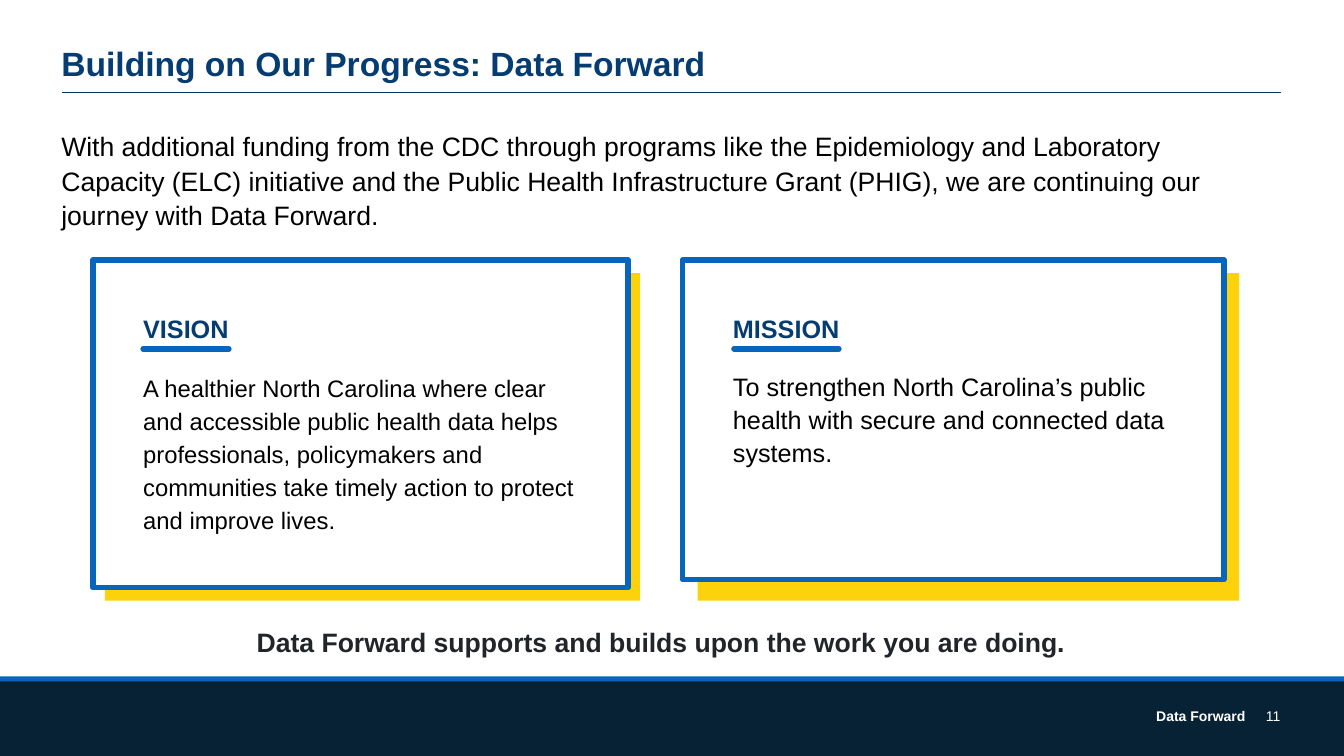
from dataclasses import dataclass

from lxml.etree import SubElement
from pptx import Presentation
from pptx.dml.color import RGBColor
from pptx.enum.shapes import MSO_CONNECTOR, MSO_SHAPE
from pptx.enum.text import MSO_ANCHOR, PP_ALIGN
from pptx.oxml.ns import qn
from pptx.util import Emu, Pt

SCALE = 9144  # EMU in one px, 100 px to the inch


@dataclass(frozen=True)
class Theme:
    font: str = "Arial"
    navy: str = "053C71"
    rule: str = "003764"
    blue: str = "0765BD"
    gold: str = "FCD20D"
    dark: str = "072235"
    white: str = "FFFFFF"
    black: str = "000000"
    ink: str = "212529"
    title: int = 24
    lead: int = 19
    head: int = 18
    small: int = 10
    edge: int = 4


THEME = Theme()


def px(num):
    return Emu(num * SCALE)


def rgb(code):
    return RGBColor.from_string(code)


def write(frame, text, first=True, size=THEME.lead, color=THEME.black,
          bold=False, align=PP_ALIGN.LEFT, lead=None, after=0):
    """Write one paragraph, the frame's first one or a new last one."""
    para = frame.paragraphs[0] if first else frame.add_paragraph()
    para.alignment = align
    para.line_spacing = lead
    para.space_after = Pt(after)
    run = para.add_run()
    run.text = text
    font = run.font
    font.name, font.size, font.bold = THEME.font, Pt(size), bold
    font.color.rgb = rgb(color)


def inset(frame, side, top):
    frame.margin_left = frame.margin_right = px(side)
    frame.margin_top = frame.margin_bottom = px(top)


def label(slide, box, text, side=10, top=5, anchor=MSO_ANCHOR.TOP, **style):
    frame = slide.shapes.add_textbox(*map(px, box)).text_frame
    frame.word_wrap = True
    frame.vertical_anchor = anchor
    inset(frame, side, top)
    write(frame, text, **style)


def block(slide, box, fill, edge=None):
    shape = slide.shapes.add_shape(MSO_SHAPE.RECTANGLE, *map(px, box))
    shape.shadow.inherit = False
    shape.fill.solid()
    shape.fill.fore_color.rgb = rgb(fill)
    if edge:
        shape.line.color.rgb = rgb(edge)
        shape.line.width = Pt(THEME.edge)
    else:
        shape.line.fill.background()
    return shape


def rule(slide, left, right, top, color, width, cap="flat"):
    line = slide.shapes.add_connector(
        MSO_CONNECTOR.STRAIGHT, px(left), px(top), px(right), px(top))
    line.line.color.rgb = rgb(color)
    line.line.width = Pt(width)
    props = line.element.spPr
    props.get_or_add_ln().set("cap", cap)
    SubElement(props, qn("a:effectLst"))


def card(slide, box, head, body, size, line):
    frame = block(slide, box, THEME.white, THEME.blue).text_frame
    frame.word_wrap = True
    frame.vertical_anchor = MSO_ANCHOR.TOP
    inset(frame, 50, 50)
    gaps = {"lead": Pt(23.6), "after": 18}
    write(frame, head, size=THEME.head, color=THEME.navy, bold=True, **gaps)
    write(frame, body, first=False, size=size, **gaps)
    rule(slide, *line, 346, THEME.blue, THEME.edge, cap="rnd")


def footer(slide):
    block(slide, (0, 671, 1333, 79), THEME.blue)
    block(slide, (0, 676, 1333, 74), THEME.dark)
    style = {"size": THEME.small, "color": THEME.white,
             "align": PP_ALIGN.RIGHT}
    label(slide, (1120, 690, 150, 40), "11", side=0, top=0,
          anchor=MSO_ANCHOR.MIDDLE, **style)
    label(slide, (925, 697, 320, 27), "Data Forward", bold=True, **style)


def main():
    deck = Presentation()
    deck.slide_width, deck.slide_height = px(1333), px(750)
    slide = deck.slides.add_slide(deck.slide_layouts[6])

    footer(slide)
    rule(slide, 62, 1271, 92, THEME.rule, 1)
    label(slide, (51, 42, 1242, 80), "Building on Our Progress: Data Forward",
          size=THEME.title, color=THEME.navy, bold=True, lead=0.9)
    gaps = {"lead": Pt(24.8), "after": 18}
    label(slide, (51, 121, 1171, 113),
          "With additional funding from the CDC through programs like the "
          "Epidemiology and Laboratory Capacity (ELC) initiative and the "
          "Public Health Infrastructure Grant (PHIG), we are continuing our "
          "journey with Data Forward.", **gaps)

    for left, width in ((104, 531), (692, 537)):
        block(slide, (left, 271, width, 325), THEME.gold)
    card(slide, (92, 258, 531, 325), "VISION",
         "A healthier North Carolina where clear and accessible public "
         "health data helps professionals, policymakers and communities "
         "take timely action to protect and improve lives.",
         17, (142, 227))
    card(slide, (677, 258, 537, 317), "MISSION",
         "To strengthen North Carolina’s public health with secure and "
         "connected data systems.", 18, (728, 832))
    label(slide, (70, 613, 1171, 42),
          "Data Forward supports and builds upon the work you are doing.",
          color=THEME.ink, bold=True, align=PP_ALIGN.CENTER, **gaps)

    deck.save("out.pptx")


if __name__ == "__main__":
    main()
